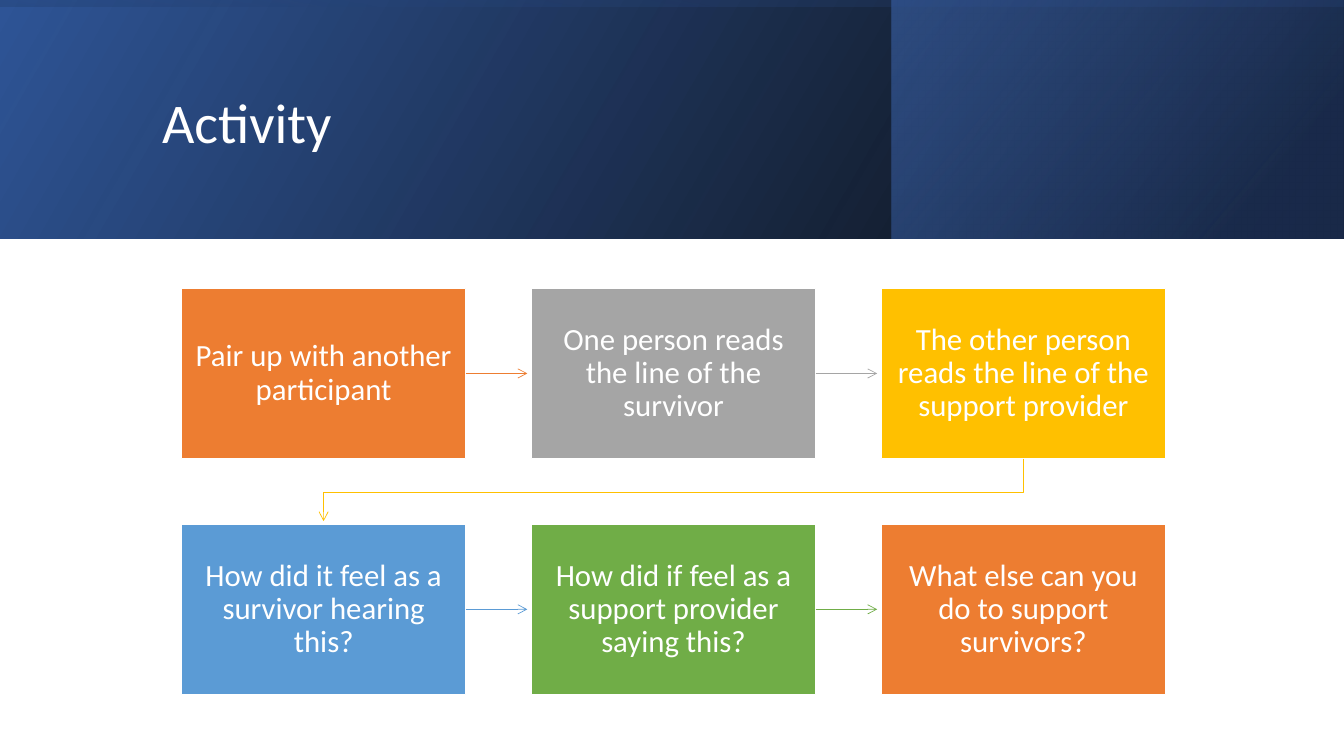
from dataclasses import dataclass

from pptx import Presentation
from pptx import oxml
from pptx import util as u
from pptx.dml import color
from pptx.enum import shapes, text
from pptx.oxml import ns

COLORS = {
    "white": "FFFFFF", "black": "000000", "navy": "203864", "deep": "2F5597",
    "royal": "4472C4", "orange": "ED7D31", "gray": "A5A5A5",
    "gold": "FFC000", "blue": "5B9BD5", "green": "70AD47",
}
FONT = "Calibri"
COLUMNS = 3
GRID_LEFT, GRID_TOP = 1.8, 2.86
STEP_X, STEP_Y = 3.47, 2.34
BOX_WIDTH, BOX_HEIGHT = 2.82, 1.69
ARROW_LENGTH = 0.61
BANNER_WIDTH, BANNER_HEIGHT = 13.33, 2.37


@dataclass
class Stop:
    position: int
    color: str
    alpha: int = 100


@dataclass
class Band:
    left: float
    top: float
    width: float
    height: float
    angle: int
    stops: list[Stop]
    rotation: int = 0


@dataclass
class Step:
    words: str
    color: str


BANDS = [
    Band(0, 0, BANNER_WIDTH, BANNER_HEIGHT, 330,
         [Stop(0, "black", 96), Stop(100, "deep")]),
    Band(8.84, 0, 4.48, BANNER_HEIGHT, 320,
         [Stop(19, "navy", 68), Stop(100, "royal", 48)]),
    Band(5.48, -5.48, BANNER_HEIGHT, BANNER_WIDTH, 350,
         [Stop(23, "deep", 16), Stop(99, "black", 45)], rotation=270),
]
STEPS = [
    Step("Pair up with another participant", "orange"),
    Step("One person reads the line of the survivor", "gray"),
    Step("The other person reads the line of the support provider", "gold"),
    Step("How did it feel as a survivor hearing this?", "blue"),
    Step("How did if feel as a support provider saying this?", "green"),
    Step("What else can you do to support survivors?", "orange"),
]


def rgb(name: str) -> color.RGBColor:
    return color.RGBColor.from_string(COLORS[name])


def write(shape, words: str, size: int) -> None:
    frame = shape.text_frame
    frame.text = words
    frame.word_wrap = True
    frame.vertical_anchor = text.MSO_ANCHOR.MIDDLE
    paragraph = frame.paragraphs[0]
    paragraph.line_spacing = 0.9
    font = paragraph.runs[0].font
    font.name, font.size = FONT, u.Pt(size)
    font.color.rgb = rgb("white")


def add_rectangle(slide, left: float, top: float, width: float, height: float):
    shape = slide.shapes.add_shape(
        shapes.MSO_SHAPE.RECTANGLE, u.Inches(left), u.Inches(top),
        u.Inches(width), u.Inches(height))
    shape.shadow.inherit = False
    return shape


def add_band(slide, band: Band) -> None:
    shape = add_rectangle(slide, band.left, band.top, band.width, band.height)
    shape.rotation = band.rotation
    shape.line.fill.background()
    shape.fill.background()
    properties = shape._element.spPr
    properties.find(ns.qn("a:xfrm")).set("flipH", "1")
    stops = "".join(
        f'<a:gs pos="{stop.position * 1000}"><a:srgbClr val="{COLORS[stop.color]}">'
        f'<a:alpha val="{stop.alpha * 1000}"/></a:srgbClr></a:gs>'
        for stop in band.stops)
    gradient = oxml.parse_xml(
        f'<a:gradFill {ns.nsdecls("a")} rotWithShape="1"><a:gsLst>{stops}</a:gsLst>'
        f'<a:lin ang="{band.angle * 60000}" scaled="0"/></a:gradFill>')
    properties.replace(properties.find(ns.qn("a:noFill")), gradient)


def add_step(slide, step: Step, left: float, top: float) -> None:
    shape = add_rectangle(slide, left, top, BOX_WIDTH, BOX_HEIGHT)
    shape.fill.solid()
    shape.fill.fore_color.rgb = rgb(step.color)
    shape.line.color.rgb = rgb("white")
    shape.line.width = u.Pt(1)
    write(shape, step.words, 22)
    frame = shape.text_frame
    frame.margin_left = frame.margin_right = u.Inches(0.14)
    frame.margin_top = frame.margin_bottom = u.Inches(0.15)
    frame.paragraphs[0].alignment = text.PP_ALIGN.CENTER


def style_arrow(arrow, color_name: str) -> None:
    arrow.line.color.rgb = rgb(color_name)
    arrow.line.width = u.Pt(0.5)
    properties = arrow._element.spPr
    head = oxml.parse_xml(f'<a:tailEnd {ns.nsdecls("a")} type="arrow"/>')
    properties.find(ns.qn("a:ln")).append(head)


def add_straight_arrow(slide, left: float, middle: float, color_name: str) -> None:
    arrow = slide.shapes.add_connector(
        shapes.MSO_CONNECTOR.STRAIGHT, u.Inches(left), u.Inches(middle),
        u.Inches(left + ARROW_LENGTH), u.Inches(middle))
    style_arrow(arrow, color_name)
    arrow._element.spPr.append(
        oxml.parse_xml(f'<a:effectLst {ns.nsdecls("a")}/>'))


def add_return_arrow(slide, left: float, top: float, color_name: str) -> None:
    """Lead from the end of one row to the start of the next."""
    start_x = left + BOX_WIDTH / 2
    end_x = start_x - (COLUMNS - 1) * STEP_X
    start_y = top + BOX_HEIGHT
    bend_y = start_y + 0.33
    route = [(start_x, bend_y), (end_x, bend_y), (end_x, start_y + 0.62)]
    builder = slide.shapes.build_freeform(u.Inches(start_x), u.Inches(start_y))
    builder.add_line_segments(
        [(u.Inches(x), u.Inches(y)) for x, y in route], close=False)
    arrow = builder.convert_to_shape()
    arrow.fill.background()
    arrow.shadow.inherit = False
    style_arrow(arrow, color_name)


def main() -> None:
    presentation = Presentation()
    presentation.slide_width = u.Inches(13.33)
    presentation.slide_height = u.Inches(7.5)
    slide = presentation.slides.add_slide(presentation.slide_layouts[6])

    # Banner and title
    for band in BANDS:
        add_band(slide, band)
    title = slide.shapes.add_textbox(
        u.Inches(1.51), u.Inches(0.38), u.Inches(10.63), u.Inches(1.72))
    write(title, "Activity", 40)

    # Steps, each with an arrow to the next one
    for index, step in enumerate(STEPS):
        row, column = divmod(index, COLUMNS)
        left, top = GRID_LEFT + column * STEP_X, GRID_TOP + row * STEP_Y
        add_step(slide, step, left, top)
        if index == len(STEPS) - 1:
            continue
        if column < COLUMNS - 1:
            add_straight_arrow(
                slide, left + BOX_WIDTH, top + BOX_HEIGHT / 2, step.color)
        else:
            add_return_arrow(slide, left, top, step.color)

    presentation.save("out.pptx")


if __name__ == "__main__":
    main()
